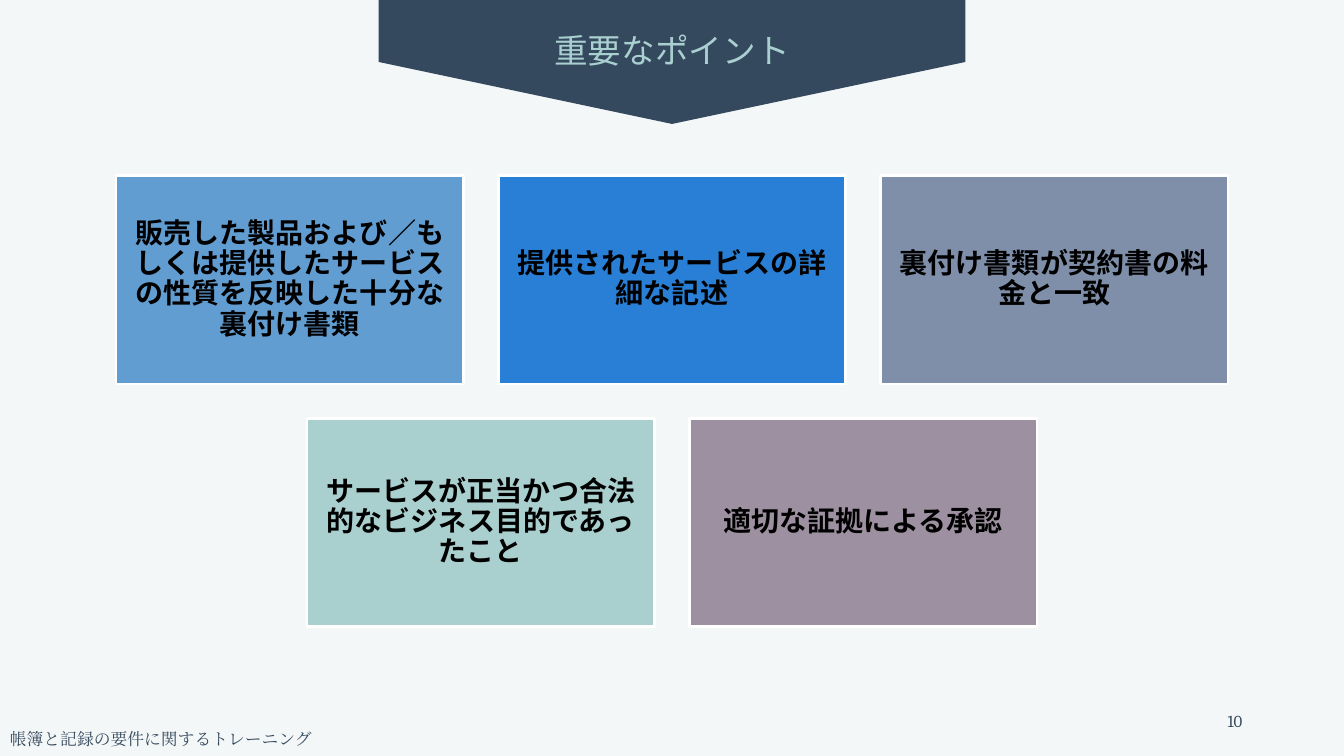
import dataclasses

import pptx
import pptx.dml.color
import pptx.enum.shapes
import pptx.enum.text
import pptx.oxml
import pptx.oxml.ns
import pptx.util

SHAPE = pptx.enum.shapes.MSO_SHAPE
ALIGN = pptx.enum.text.PP_ALIGN
ANCHOR = pptx.enum.text.MSO_ANCHOR
Inches = pptx.util.Inches


@dataclasses.dataclass(frozen=True)
class Theme:
    """Colours, fonts and type sizes of the slide."""
    background: str = "F4F7F7"
    navy: str = "34495E"
    title: str = "AACFD0"
    card_text: str = "000000"
    card_line: str = "FFFFFF"
    title_font: str = "Noto Sans CJK JP"
    card_font: str = "Arial"
    small_font: str = "Cambria"
    title_size: int = 24
    card_size: int = 20
    small_size: int = 12


THEME = Theme()
WIDTH, HEIGHT = 13.33, 7.5
COLUMNS = 3
CARD_WIDTH, CARD_HEIGHT, CARD_GAP = 3.45, 2.07, 0.34
CARDS = [
    ("販売した製品および／もしくは提供したサービスの性質を反映した十分な裏付け書類", "629DD1"),
    ("提供されたサービスの詳細な記述", "297FD5"),
    ("裏付け書類が契約書の料金と一致", "7F8FA9"),
    ("サービスが正当かつ合法的なビジネス目的であったこと", "AACFCF"),
    ("適切な証拠による承認", "9D90A0"),
]


def rgb(value):
    """Return a colour from its hex value."""
    return pptx.dml.color.RGBColor.from_string(value)


def write(sp, text, font, size, color, align, anchor=ANCHOR.TOP, bold=False):
    """Write one styled paragraph into a shape and return it."""
    tf = sp.text_frame
    tf.word_wrap = True
    tf.vertical_anchor = anchor
    p = tf.paragraphs[0]
    p.text = text
    p.alignment = align
    r = p.runs[0]
    r.font.name = font
    r.font.size = pptx.util.Pt(size)
    r.font.bold = bold
    r.font.color.rgb = rgb(color)
    ea = pptx.oxml.parse_xml(f'<a:ea {pptx.oxml.ns.nsdecls("a")} typeface="{font}"/>')
    r.font._element.find(pptx.oxml.ns.qn("a:latin")).addnext(ea)
    return p


def add_label(slide, box, *style):
    """Place a styled text box in the given box."""
    sp = slide.shapes.add_textbox(*map(Inches, box))
    return write(sp, *style)


def add_filled(slide, kind, box, color):
    """Place a flat filled shape in the given box."""
    sp = slide.shapes.add_shape(kind, *map(Inches, box))
    sp.shadow.inherit = False
    sp.fill.solid()
    sp.fill.fore_color.rgb = rgb(color)
    return sp


def add_banner(slide, box, title):
    """Fill the box with a downward pentagon and its title."""
    left, top, width, height = box
    turned = (left + (width - height) / 2, top + (height - width) / 2, height, width)
    sp = add_filled(slide, SHAPE.PENTAGON, turned, THEME.navy)
    sp.line.fill.background()
    sp.rotation = 90
    margin = 0.78
    add_label(slide, (left - margin, top + 0.25, width + 2 * margin, 0.5), title,
              THEME.title_font, THEME.title_size, THEME.title, ALIGN.CENTER)


def add_card(slide, box, text, color):
    """Fill the box with one coloured card."""
    sp = add_filled(slide, SHAPE.RECTANGLE, box, color)
    sp.line.color.rgb = rgb(THEME.card_line)
    sp.line.width = pptx.util.Pt(2)
    tf = sp.text_frame
    tf.margin_left = tf.margin_right = tf.margin_top = tf.margin_bottom = Inches(0.08)
    p = write(sp, text, THEME.card_font, THEME.card_size, THEME.card_text,
              ALIGN.CENTER, ANCHOR.MIDDLE, True)
    p.line_spacing = 0.9
    p.space_after = pptx.util.Pt(0.35 * THEME.card_size)


def add_cards(slide, box, cards):
    """Lay the cards out in rows centred in the box."""
    left, top, width, _ = box
    for start in range(0, len(cards), COLUMNS):
        row = cards[start:start + COLUMNS]
        row_width = len(row) * (CARD_WIDTH + CARD_GAP) - CARD_GAP
        x = left + (width - row_width) / 2
        y = top + start // COLUMNS * (CARD_HEIGHT + CARD_GAP)
        for column, (text, color) in enumerate(row):
            card_x = x + column * (CARD_WIDTH + CARD_GAP)
            add_card(slide, (card_x, y, CARD_WIDTH, CARD_HEIGHT), text, color)


def add_footer(slide, box, text, number):
    """Place the course name and the page number in the box."""
    left, top, width, height = box
    style = (THEME.small_font, THEME.small_size, THEME.navy)
    add_label(slide, (left, top + height - 0.34, 4.17, 0.34), text, *style, ALIGN.LEFT)
    add_label(slide, (left + width - 3.91, top, 3, 0.4), number, *style,
              ALIGN.RIGHT, ANCHOR.MIDDLE)


def add_key_points(prs):
    """Build the key points slide."""
    slide = prs.slides.add_slide(prs.slide_layouts[6])
    slide.background.fill.solid()
    slide.background.fill.fore_color.rgb = rgb(THEME.background)
    add_banner(slide, ((WIDTH - 5.82) / 2, 0, 5.82, 1.23), "重要なポイント")
    add_cards(slide, (0, 1.74, WIDTH, 4.48), CARDS)
    add_footer(slide, (0, 6.95, WIDTH, 0.57), "帳簿と記録の要件に関するトレーニング", "10")


def main():
    """Create and save the presentation."""
    prs = pptx.Presentation()
    prs.slide_width, prs.slide_height = Inches(WIDTH), Inches(HEIGHT)
    add_key_points(prs)
    prs.save("out.pptx")


if __name__ == "__main__":
    main()
